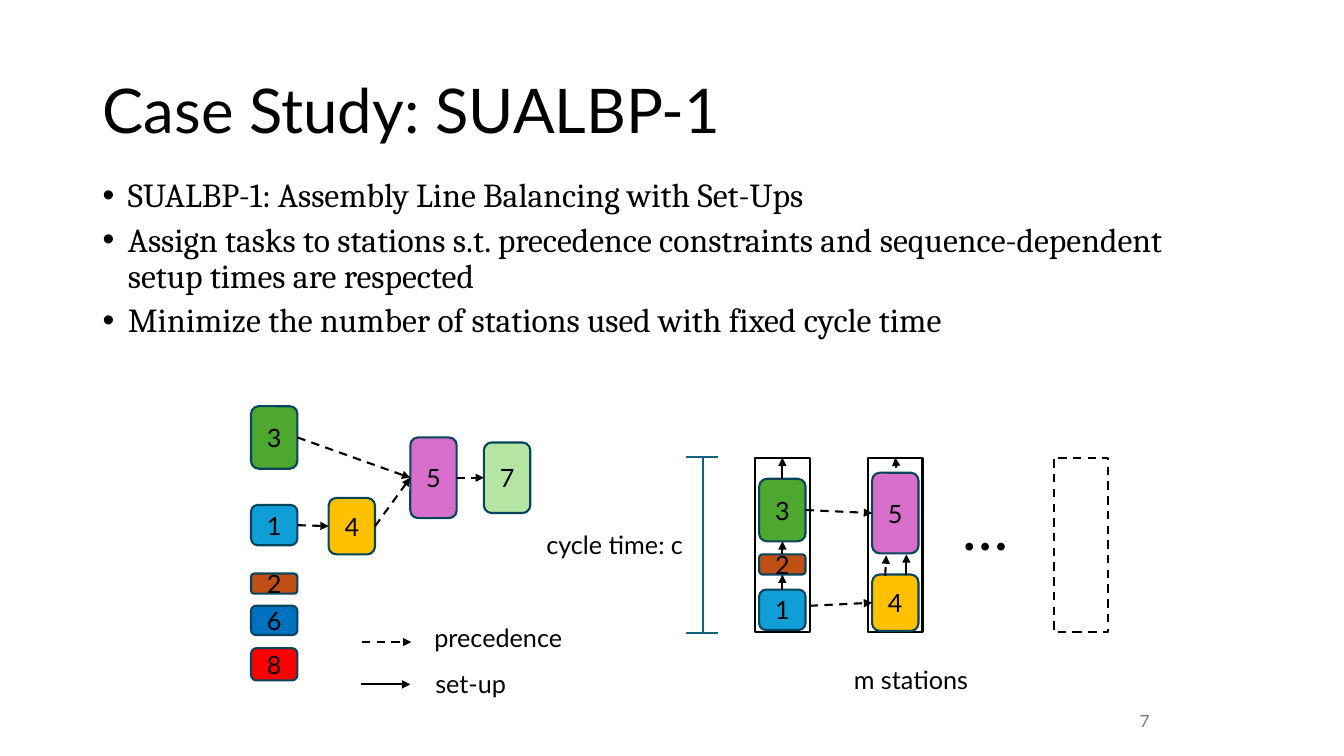
from lxml import etree
from pptx import Presentation
from pptx import util as u
from pptx.dml.color import RGBColor
from pptx.enum import dml, shapes, text
from pptx.oxml.ns import qn

BLACK = RGBColor(0x00, 0x00, 0x00)
WHITE = RGBColor(0xFF, 0xFF, 0xFF)
GRAY = RGBColor(0x79, 0x79, 0x79)
TEAL = RGBColor(0x15, 0x60, 0x82)
TASK_EDGE = RGBColor(0x07, 0x45, 0x5D)
TASK_COLORS = {
    1: RGBColor(0x0F, 0x9E, 0xD5),
    2: RGBColor(0xC0, 0x4F, 0x15),
    3: RGBColor(0x4E, 0xA7, 0x2E),
    4: RGBColor(0xFF, 0xC0, 0x00),
    5: RGBColor(0xD8, 0x6E, 0xCC),
    6: RGBColor(0x00, 0x70, 0xC0),
    7: RGBColor(0xB4, 0xE5, 0xA2),
    8: RGBColor(0xFF, 0x00, 0x00),
}
TASK_HEIGHTS = {1: 0.4, 2: 0.2, 3: 0.62, 4: 0.56, 5: 0.8, 6: 0.29, 7: 0.7, 8: 0.32}
TASK_WIDTH = 0.46
STATION_TOP, STATION_WIDTH, STATION_HEIGHT = 4.54, 0.54, 1.73
TOP, LEFT, BOTTOM, RIGHT = range(4)


def write(frame, lines, size=18, font="Lato", color=BLACK, align=None,
          anchor=text.MSO_ANCHOR.TOP, spacing=None, before=None, bullet=None):
    frame.vertical_anchor = anchor
    for i, line in enumerate(lines):
        paragraph = frame.paragraphs[0] if i == 0 else frame.add_paragraph()
        paragraph.alignment = align
        paragraph.line_spacing = spacing
        if before is not None:
            paragraph.space_before = u.Pt(before)
        if bullet:
            props = paragraph._p.get_or_add_pPr()
            props.set("marL", str(u.Inches(0.25)))
            props.set("indent", str(-u.Inches(0.25)))
            etree.SubElement(props, qn("a:buFont")).set("typeface", "Arial")
            etree.SubElement(props, qn("a:buChar")).set("char", bullet)
        run = paragraph.add_run()
        run.text = line
        run.font.size = u.Pt(size)
        run.font.name = font
        run.font.color.rgb = color


class Diagram:
    """Draws on one slide with a shared line style."""

    def __init__(self, slide, line_width=1.5):
        self.shapes = slide.shapes
        self.line_width = u.Pt(line_width)

    def outline(self, line, color, dashed):
        line.color.rgb = color
        line.width = self.line_width
        if dashed:
            line.dash_style = dml.MSO_LINE.DASH

    def label(self, left, top, width, height, *lines, wrap=True, **style):
        box = self.shapes.add_textbox(*map(u.Inches, (left, top, width, height)))
        frame = box.text_frame
        frame.word_wrap = wrap
        if not wrap:
            frame.auto_size = text.MSO_AUTO_SIZE.SHAPE_TO_FIT_TEXT
        write(frame, lines, **style)

    def block(self, kind, left, top, width, height, fill, edge, dashed=False):
        block = self.shapes.add_shape(kind, *map(u.Inches, (left, top, width, height)))
        block.shadow.inherit = False
        block.fill.solid()
        block.fill.fore_color.rgb = fill
        self.outline(block.line, edge, dashed)
        return block

    def task(self, number, left, top):
        task = self.block(shapes.MSO_SHAPE.ROUNDED_RECTANGLE, left, top, TASK_WIDTH,
                          TASK_HEIGHTS[number], TASK_COLORS[number], TASK_EDGE)
        write(task.text_frame, [str(number)], align=text.PP_ALIGN.CENTER,
              anchor=text.MSO_ANCHOR.MIDDLE)
        return task

    def station(self, left, dashed=False):
        return self.block(shapes.MSO_SHAPE.RECTANGLE, left, STATION_TOP, STATION_WIDTH,
                          STATION_HEIGHT, WHITE, BLACK, dashed)

    def line(self, start, end, color=BLACK, dashed=False, arrow=True):
        """Each end is an (x, y) point in inches or a (shape, side) pair."""
        joined = [not isinstance(place[0], (int, float)) for place in (start, end)]
        points = [(0, 0) if join else place for join, place in zip(joined, (start, end))]
        line = self.shapes.add_connector(
            shapes.MSO_CONNECTOR.STRAIGHT,
            *(u.Inches(value) for point in points for value in point))
        if joined[0]:
            line.begin_connect(*start)
        if joined[1]:
            line.end_connect(*end)
        self.outline(line.line, color, dashed)
        if arrow:
            etree.SubElement(line.line._get_or_add_ln(), qn("a:tailEnd")).set("type", "triangle")
        etree.SubElement(line._element.spPr, qn("a:effectLst"))


def draw_text(diagram):
    diagram.label(0.92, 0.4, 11.5, 1.45, "Case Study: SUALBP-1", size=44,
                  anchor=text.MSO_ANCHOR.MIDDLE, spacing=0.9)
    diagram.label(
        0.92, 1.72, 11.09, 1.96,
        "SUALBP-1: Assembly Line Balancing with Set-Ups",
        "Assign tasks to stations s.t. precedence constraints and "
        "sequence-dependent setup times are respected",
        "Minimize the number of stations used with fixed cycle time",
        size=24, font="Cambria", spacing=0.9, before=6, bullet="•")
    diagram.label(8.5, 6.95, 3, 0.4, "7", size=12, color=GRAY,
                  align=text.PP_ALIGN.RIGHT, anchor=text.MSO_ANCHOR.MIDDLE)


def draw_precedence_graph(diagram):
    places = {1: (2.49, 5.01), 2: (2.49, 5.69), 3: (2.49, 4.03), 4: (3.26, 4.94),
              5: (4.07, 4.34), 6: (2.49, 6.01), 7: (4.8, 4.39), 8: (2.49, 6.43)}
    tasks = {number: diagram.task(number, *place) for number, place in places.items()}
    for before, after in ((1, 4), (3, 5), (4, 5), (5, 7)):
        diagram.line((tasks[before], RIGHT), (tasks[after], LEFT), dashed=True)


def draw_legend(diagram):
    diagram.line((3.59, 6.37), (4.08, 6.37), dashed=True)
    diagram.label(4.21, 6.12, 1.51, 0.4, "precedence", wrap=False)
    diagram.line((3.58, 6.79), (4.07, 6.79))
    diagram.label(4.22, 6.58, 0.93, 0.4, "set-up", wrap=False)


def draw_cycle_time(diagram):
    top, bottom = 4.53, 6.28
    diagram.line((6.97, top), (6.97, bottom), color=TEAL, arrow=False)
    for y in (top, bottom):
        diagram.line((6.8, y), (7.12, y), color=TEAL, arrow=False)
    diagram.label(5.32, 5.2, 1.62, 0.4, "cycle time: c", wrap=False)


def draw_stations(diagram):
    first, second = diagram.station(7.49), diagram.station(8.61)
    diagram.station(10.45, dashed=True)
    diagram.label(9.45, 4.8, 0.71, 0.84, "…", size=44, wrap=False)
    diagram.label(8.37, 6.54, 1.35, 0.4, "m stations", wrap=False)

    places = {1: (7.53, 5.85), 2: (7.53, 5.5), 3: (7.53, 4.75),
              4: (8.65, 5.7), 5: (8.65, 4.69)}
    tasks = {number: diagram.task(number, *place) for number, place in places.items()}

    for lower, upper in ((1, 2), (2, 3)):
        diagram.line((tasks[lower], TOP), (tasks[upper], BOTTOM))
    diagram.line((tasks[3], TOP), (first, TOP))
    diagram.line((8.99, 5.7), (8.99, 5.5))
    diagram.line((8.78, 5.71), (8.79, 5.51), dashed=True)
    diagram.line((8.89, 4.64), (second, TOP))
    diagram.line((tasks[3], RIGHT), (tasks[5], LEFT), dashed=True)
    diagram.line((8.03, 6.01), (tasks[4], LEFT), dashed=True)


def main():
    deck = Presentation()
    deck.slide_width, deck.slide_height = u.Inches(13.33), u.Inches(7.5)
    diagram = Diagram(deck.slides.add_slide(deck.slide_layouts[6]))
    draw_text(diagram)
    draw_precedence_graph(diagram)
    draw_legend(diagram)
    draw_cycle_time(diagram)
    draw_stations(diagram)
    deck.save("out.pptx")


if __name__ == "__main__":
    main()
